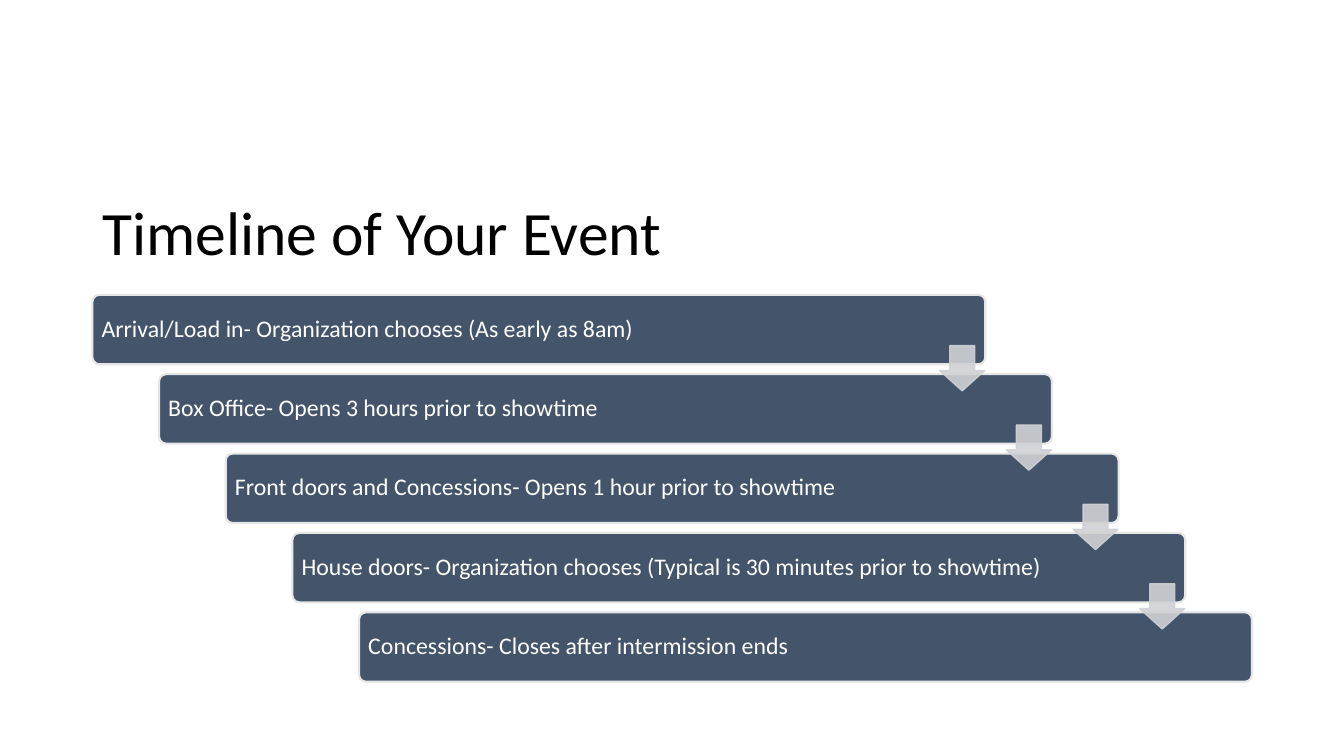
from dataclasses import dataclass

from lxml.etree import SubElement
from pptx import Presentation
from pptx.dml.color import RGBColor
from pptx.enum.shapes import MSO_SHAPE
from pptx.enum.text import MSO_ANCHOR, MSO_AUTO_SIZE, PP_ALIGN
from pptx.oxml.ns import qn
from pptx.shapes.autoshape import Shape
from pptx.slide import Slide
from pptx.text.text import TextFrame
from pptx.util import Cm, Pt

FONT = "Calibri"
STEP_X, STEP_Y = 1.68, 2.0
BAR_LEFT, BAR_TOP, BAR_WIDTH, BAR_HEIGHT = 2.33, 7.43, 22.5, 1.75
ARROW_LEFT, ARROW_TOP, ARROW_SIZE = 23.68, 8.71, 1.14


@dataclass
class Stage:
    index: int
    text: str

    @property
    def dx(self) -> float:
        return self.index * STEP_X

    @property
    def dy(self) -> float:
        return self.index * STEP_Y


STAGES = [Stage(i, text) for i, text in enumerate([
    "Arrival/Load in- Organization chooses (As early as 8am)",
    "Box Office- Opens 3 hours prior to showtime",
    "Front doors and Concessions- Opens 1 hour prior to showtime",
    "House doors- Organization chooses (Typical is 30 minutes prior to showtime)",
    "Concessions- Closes after intermission ends",
])]


def rgb(value: str) -> RGBColor:
    return RGBColor.from_string(value)


def write_text(tf: TextFrame, text: str, size: float, color: str) -> None:
    tf.text = text
    tf.word_wrap = True
    tf.auto_size = MSO_AUTO_SIZE.NONE
    tf.vertical_anchor = MSO_ANCHOR.MIDDLE
    p = tf.paragraphs[0]
    p.alignment = PP_ALIGN.LEFT
    p.line_spacing = 0.9
    p.font.name = FONT
    p.font.size = Pt(size)
    p.font.color.rgb = rgb(color)


def style_shape(sp: Shape, fill: str, line: str, width: float) -> None:
    sp.shadow.inherit = False
    sp.fill.solid()
    sp.fill.fore_color.rgb = rgb(fill)
    sp.line.color.rgb = rgb(line)
    sp.line.width = Pt(width)


def set_opacity(sp: Shape, percent: int) -> None:
    for color in sp.element.spPr.iter(qn("a:srgbClr")):
        SubElement(color, qn("a:alpha")).set("val", str(percent * 1000))


def add_bar(s: Slide, stage: Stage) -> None:
    sp = s.shapes.add_shape(
        MSO_SHAPE.ROUNDED_RECTANGLE, Cm(BAR_LEFT + stage.dx),
        Cm(BAR_TOP + stage.dy), Cm(BAR_WIDTH), Cm(BAR_HEIGHT))
    sp.adjustments[0] = 0.1
    style_shape(sp, "44546A", "E7E6E6", 1.5)
    tf = sp.text_frame
    tf.margin_left = tf.margin_right = tf.margin_top = tf.margin_bottom = Cm(0.18)
    write_text(tf, stage.text, 17, "FFFFFF")


def add_arrow(s: Slide, stage: Stage) -> None:
    sp = s.shapes.add_shape(
        MSO_SHAPE.DOWN_ARROW, Cm(ARROW_LEFT + stage.dx),
        Cm(ARROW_TOP + stage.dy), Cm(ARROW_SIZE), Cm(ARROW_SIZE))
    sp.adjustments[0] = 0.55
    sp.adjustments[1] = 0.45
    style_shape(sp, "CFD1D4", "CFD1D4", 1)
    set_opacity(sp, 90)


def main() -> None:
    prs = Presentation()
    prs.slide_width, prs.slide_height = Cm(33.87), Cm(19.05)
    s = prs.slides.add_slide(prs.slide_layouts[5])
    title = s.shapes.title
    title.left, title.top = Cm(2.33), Cm(4.72)
    title.width, title.height = Cm(29.21), Cm(2.44)
    write_text(title.text_frame, "Timeline of Your Event", 44, "000000")
    for stage in STAGES:
        add_bar(s, stage)
    for stage in STAGES[:-1]:
        add_arrow(s, stage)
    prs.save("out.pptx")


if __name__ == "__main__":
    main()
